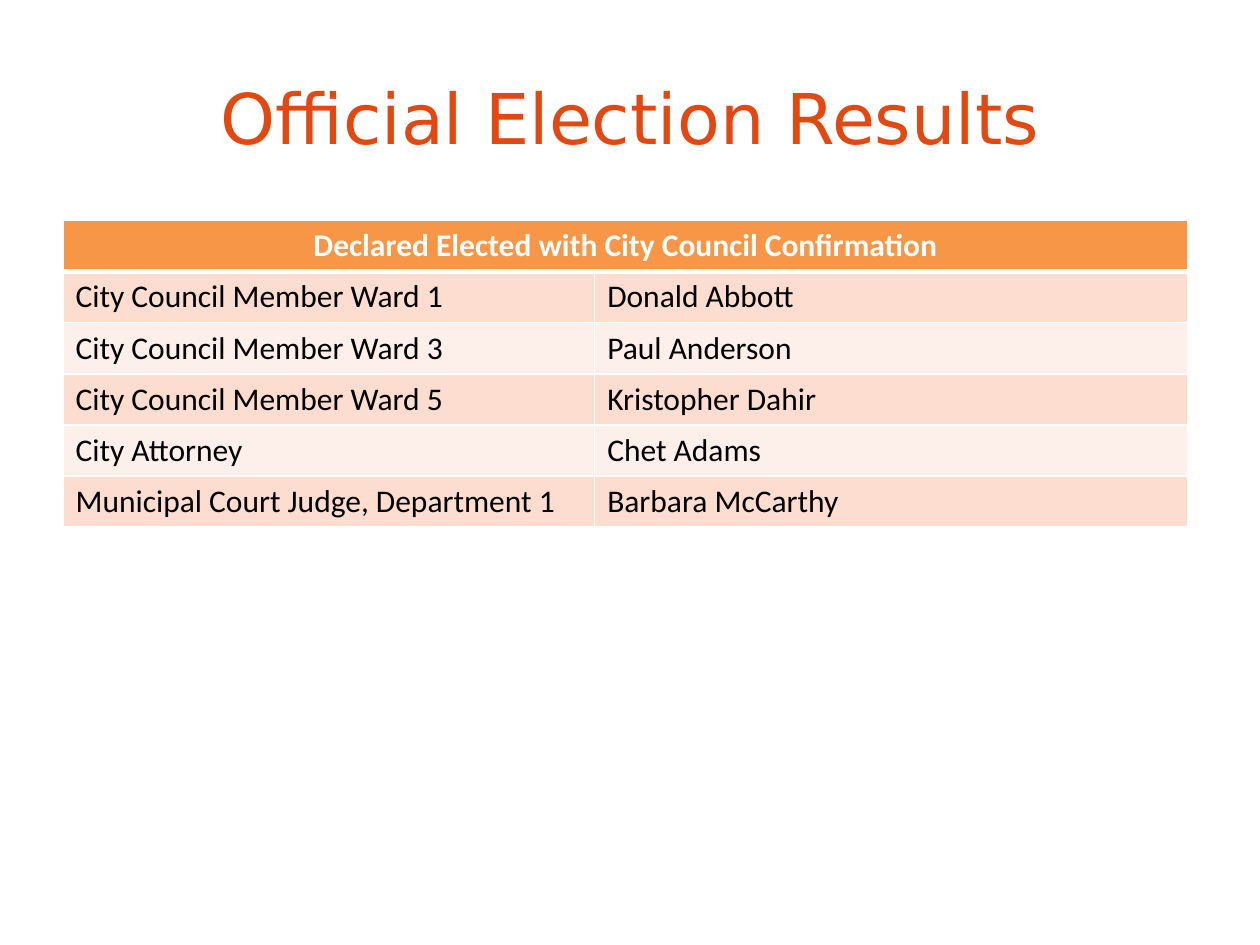
from pptx import Presentation
from pptx.dml.color import RGBColor
from pptx.enum.text import MSO_ANCHOR, PP_ALIGN
from pptx.oxml import parse_xml
from pptx.oxml.ns import nsdecls
from pptx.util import Inches, Pt

RED_ORANGE = RGBColor(0xE2, 0x49, 0x12)
ORANGE = RGBColor(0xF7, 0x96, 0x46)
PEACH = RGBColor(0xFC, 0xDD, 0xCF)
PALE_PEACH = RGBColor(0xFD, 0xEF, 0xE9)
WHITE = RGBColor(0xFF, 0xFF, 0xFF)
BLACK = RGBColor(0, 0, 0)

HEADING = "Declared Elected with City Council Confirmation"
WINNERS = [
    ("City Council Member Ward 1", "Donald Abbott"),
    ("City Council Member Ward 3", "Paul Anderson"),
    ("City Council Member Ward 5", "Kristopher Dahir"),
    ("City Attorney", "Chet Adams"),
    ("Municipal Court Judge, Department 1", "Barbara McCarthy"),
]


def add_borders(cell, top, bottom):
    """Draw white cell borders; top and bottom are widths in points."""
    properties = cell._tc.get_or_add_tcPr()
    for side, width in (("L", 1), ("R", 1), ("T", top), ("B", bottom)):
        properties.append(parse_xml(
            f'<a:ln{side} {nsdecls("a")} w="{Pt(width)}"><a:solidFill>'
            f'<a:srgbClr val="{WHITE}"/></a:solidFill></a:ln{side}>'))


deck = Presentation()
deck.slide_width, deck.slide_height = Inches(10), Inches(7.5)
page = deck.slides.add_slide(deck.slide_layouts[5])

title = page.shapes.title
title.left, title.top = Inches(0.5), Inches(0.3)
title.width, title.height = Inches(9), Inches(1.25)
title.text_frame.text = "Official Election Results"
title.text_frame.vertical_anchor = MSO_ANCHOR.MIDDLE
para = title.text_frame.paragraphs[0]
para.alignment = PP_ALIGN.CENTER
para.font.name = "DejaVu Sans"
para.font.size = Pt(40)
para.font.color.rgb = RED_ORANGE

rows = [(HEADING, "")] + WINNERS
table = page.shapes.add_table(len(rows), 2, Inches(0.5), Inches(1.75),
                              Inches(8.93), Inches(2.43)).table
table.columns[0].width = Inches(4.22)
table.columns[1].width = Inches(4.71)
table.cell(0, 0).merge(table.cell(0, 1))

for row, texts in enumerate(rows):
    is_heading = row == 0
    for column, text in enumerate(texts):
        cell = table.cell(row, column)
        add_borders(cell, top=3 if row == 1 else 1, bottom=3 if is_heading else 1)
        cell.fill.solid()
        cell.fill.fore_color.rgb = ORANGE if is_heading else (PALE_PEACH, PEACH)[row % 2]
        cell.text = text
        para = cell.text_frame.paragraphs[0]
        para.alignment = PP_ALIGN.CENTER if is_heading else PP_ALIGN.LEFT
        para.font.name = "Calibri"
        para.font.size = Pt(18)
        para.font.bold = is_heading
        para.font.color.rgb = WHITE if is_heading else BLACK

deck.save("out.pptx")
